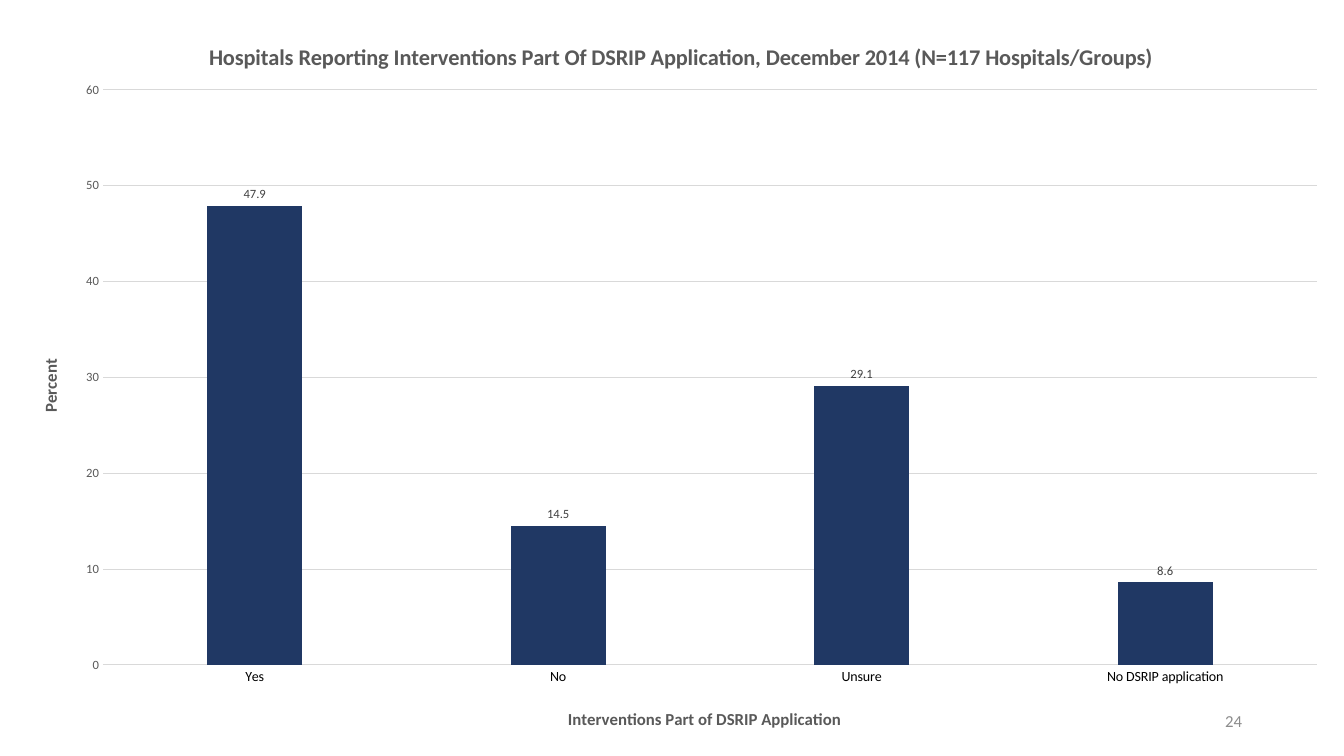
from lxml.etree import SubElement
from pptx import Presentation
from pptx.chart.data import CategoryChartData
from pptx.dml.color import RGBColor
from pptx.enum.chart import XL_CHART_TYPE, XL_LABEL_POSITION, XL_TICK_MARK
from pptx.enum.text import MSO_ANCHOR, PP_ALIGN
from pptx.oxml.ns import qn
from pptx.util import Pt

PX = 914400 / 100.8
FONT = "Calibri"
NAVY = RGBColor(0x20, 0x38, 0x64)
BLACK = RGBColor(0x00, 0x00, 0x00)
DARK_GREY = RGBColor(0x40, 0x40, 0x40)
TITLE_GREY = RGBColor(0x59, 0x59, 0x59)
NUMBER_GREY = RGBColor(0x8C, 0x8C, 0x8C)
GRID_GREY = RGBColor(0xD9, 0xD9, 0xD9)

RESPONSES = {"Yes": 47.9, "No": 14.5, "Unsure": 29.1, "No DSRIP application": 8.6}
CHART_LEFT, CHART_TOP, CHART_WIDTH, CHART_HEIGHT = 11, 11, 1333, 735


def px(length):
    return round(length * PX)


def style_font(font, size, color, bold=False):
    font.name = FONT
    font.size = Pt(size)
    font.bold = bold
    font.color.rgb = color


def style_line(line):
    line.color.rgb = GRID_GREY
    line.width = Pt(0.75)


def place(element, left, top, width=None, height=None):
    """Fix a chart part at a slide position in px; a size marks the inner plot area."""
    for old_layout in element.findall(qn("c:layout")):
        element.remove(old_layout)
    layout = SubElement(element, qn("c:layout"))
    text = element.find(qn("c:tx"))
    element.insert(0 if text is None else 1, layout)
    manual = SubElement(layout, qn("c:manualLayout"))
    settings = {"xMode": "edge", "yMode": "edge",
                "x": (left - CHART_LEFT) / CHART_WIDTH,
                "y": (top - CHART_TOP) / CHART_HEIGHT}
    if width:
        settings = {"layoutTarget": "inner", **settings,
                    "w": width / CHART_WIDTH, "h": height / CHART_HEIGHT}
    for tag, value in settings.items():
        SubElement(manual, qn(f"c:{tag}")).set("val", str(value))


def write_title(title, text, size, left, top, rotation=0):
    frame = title.text_frame
    frame.text = text
    style_font(frame.paragraphs[0].runs[0].font, size, TITLE_GREY, bold=True)
    frame._element.find(qn("a:bodyPr")).set("rot", str(rotation * 60000))
    place(title._element, left, top)


def style_axis(axis, size, color):
    axis.major_tick_mark = XL_TICK_MARK.NONE
    axis.minor_tick_mark = XL_TICK_MARK.NONE
    style_font(axis.tick_labels.font, size, color)


def style_bars(plot):
    plot.gap_width = 219
    plot.overlap = -27
    plot.vary_by_categories = False
    bars = plot.series[0]
    bars.format.fill.solid()
    bars.format.fill.fore_color.rgb = NAVY
    labels = bars.data_labels
    labels.show_value = True
    labels.number_format = "0.0"
    labels.number_format_is_linked = False
    labels.position = XL_LABEL_POSITION.OUTSIDE_END
    style_font(labels.font, 9, DARK_GREY)


def add_response_chart(slide):
    data = CategoryChartData()
    data.categories = list(RESPONSES)
    data.add_series("Series 1", list(RESPONSES.values()))
    chart = slide.shapes.add_chart(
        XL_CHART_TYPE.COLUMN_CLUSTERED, px(CHART_LEFT), px(CHART_TOP),
        px(CHART_WIDTH), px(CHART_HEIGHT), data).chart
    chart.has_legend = False
    style_font(chart.font, 10, BLACK)
    write_title(chart.chart_title,
                "Hospitals Reporting Interventions Part Of DSRIP Application, "
                "December 2014 (N=117 Hospitals/Groups)", 16, 205, 38)
    style_bars(chart.plots[0])

    responses = chart.category_axis
    style_axis(responses, 10, BLACK)
    style_line(responses.format.line)
    write_title(responses.axis_title, "Interventions Part of DSRIP Application", 12, 565, 705)

    percent = chart.value_axis
    style_axis(percent, 9, TITLE_GREY)
    percent.minimum_scale, percent.maximum_scale, percent.major_unit = 0, 60, 10
    percent.tick_labels.number_format = "0"
    percent.tick_labels.number_format_is_linked = False
    percent.format.line.fill.background()
    style_line(percent.major_gridlines.format.line)
    write_title(percent.axis_title, "Percent", 12, 36, 356, rotation=-90)

    place(chart._chartSpace.chart.plotArea, 103, 90, 1214, 575)


def add_page_number(slide, number):
    frame = slide.shapes.add_textbox(px(950), px(701), px(302), px(40)).text_frame
    frame.word_wrap = True
    frame.vertical_anchor = MSO_ANCHOR.MIDDLE
    frame.text = number
    paragraph = frame.paragraphs[0]
    paragraph.alignment = PP_ALIGN.RIGHT
    style_font(paragraph.runs[0].font, 12, NUMBER_GREY)


def main():
    deck = Presentation()
    deck.slide_width, deck.slide_height = px(1344), px(756)
    slide = deck.slides.add_slide(deck.slide_layouts[6])
    add_response_chart(slide)
    add_page_number(slide, "24")
    deck.save("out.pptx")


if __name__ == "__main__":
    main()
